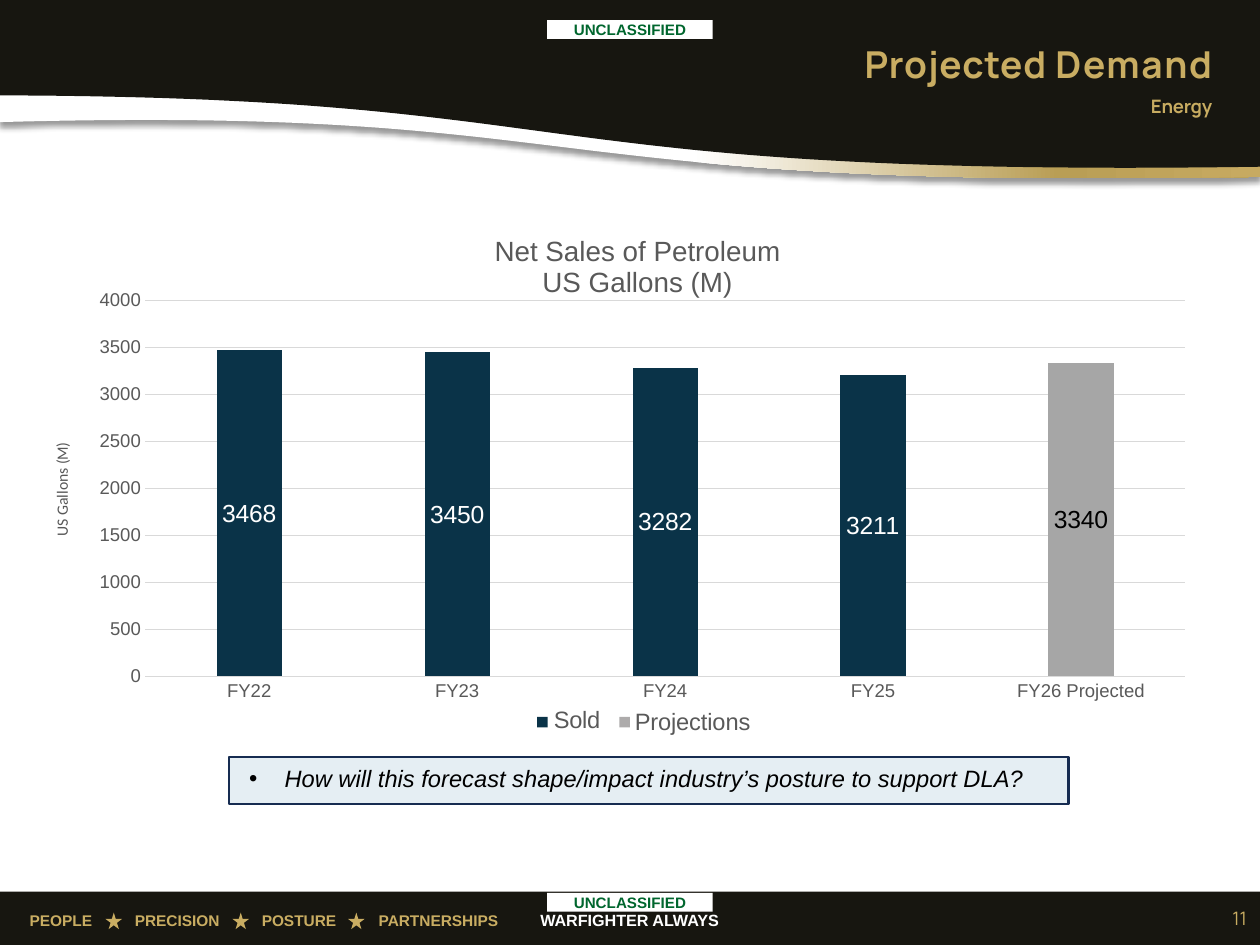
from lxml.etree import SubElement
from pptx import Presentation
from pptx.chart.data import CategoryChartData
from pptx.dml.color import RGBColor
from pptx.enum.chart import XL_CHART_TYPE, XL_LABEL_POSITION, XL_TICK_MARK
from pptx.enum.shapes import MSO_SHAPE
from pptx.enum.text import MSO_ANCHOR, MSO_AUTO_SIZE, PP_ALIGN
from pptx.oxml import parse_xml
from pptx.oxml.ns import nsdecls, qn
from pptx.util import Cm, Pt

BLACK, WHITE, GOLD, GREY, NAVY = "171610", "FFFFFF", "C9AD62", "595959", "0A3348"
NO_INSETS = dict.fromkeys(["margin_left", "margin_top", "margin_right", "margin_bottom"], 0)
MIDDLE = {"vertical_anchor": MSO_ANCHOR.MIDDLE}
CENTRED = {"alignment": PP_ALIGN.CENTER}
RIGHT = {"alignment": PP_ALIGN.RIGHT}


def colour(code):
    return RGBColor.from_string(code)


def write(box, spans, ink, font, frame_look={}, para_look={}):
    """Fill a shape with one paragraph; spans are (text, letter spacing) pairs."""
    frame = box.text_frame
    para = frame.paragraphs[0]
    for target, look in ((frame, {"word_wrap": True, **frame_look}), (para, para_look)):
        for name, value in look.items():
            setattr(target, name, value)
    for text, spacing in spans:
        span = para.add_run()
        span.text = text
        for name, value in font.items():
            setattr(span.font, name, value)
        span.font.color.rgb = colour(ink)
        if spacing:
            span.font._element.set("spc", str(spacing))
    return para


deck = Presentation()
deck.slide_width, deck.slide_height = Cm(28.78), Cm(21.59)
page = deck.slides.add_slide(deck.slide_layouts[1])

# Header: gold ribbon behind a dark wave, each closed by a Bezier lower edge
waves = []
for top, edge in (
    (1.5, [(0, 2.79), (13.94, 2.41), (11.53, 4.37), (28.78, 4.04)]),
    (0, [(0, 2.18), (13.87, 2.21), (11.48, 4.06), (28.78, 3.81)]),
):
    outline = []
    for step in range(61):
        t = step / 60
        weights = ((1 - t) ** 3, 3 * t * (1 - t) ** 2, 3 * t * t * (1 - t), t ** 3)
        outline.append([Cm(sum(w * point[axis] for w, point in zip(weights, edge))) for axis in (0, 1)])
    builder = page.shapes.build_freeform(Cm(28.78), Cm(top))
    builder.add_line_segments([(0, Cm(top))] + outline, close=True)
    wave = builder.convert_to_shape()
    wave.shadow.inherit = False
    wave.line.fill.background()
    wave.fill.solid()
    wave.fill.fore_color.rgb = colour(BLACK)
    waves.append(wave)

ribbon = waves[0]._element.spPr
stops = "".join(
    f'<a:gs pos="{place}000"><a:srgbClr val="{code}"/></a:gs>'
    for place, code in ((55, WHITE), (84, "B99E55"), (100, "C7AA61"))
)
ribbon.replace(ribbon.find(qn("a:solidFill")), parse_xml(
    f'<a:gradFill {nsdecls("a")}><a:gsLst>{stops}</a:gsLst><a:lin ang="0" scaled="0"/></a:gradFill>'))
ribbon.find(qn("a:effectLst")).append(parse_xml(
    f'<a:outerShdw {nsdecls("a")} blurRad="50800" dist="38100" dir="5400000">'
    '<a:srgbClr val="000000"><a:alpha val="40000"/></a:srgbClr></a:outerShdw>'))

# Plain shapes: footer bar, stars, legend keys, markings and question box
blocks = [(MSO_SHAPE.RECTANGLE, 0, 20.37, 28.78, 1.22, BLACK)]
blocks += [(MSO_SHAPE.STAR_5_POINT, left, 20.85, 0.38, 0.38, GOLD) for left in (2.41, 5.31, 7.95)]
blocks += [(MSO_SHAPE.RECTANGLE, left, 16.38, 0.24, 0.24, key) for left, key in ((12.27, NAVY), (14.15, "ADABAB"))]
blocks += [(MSO_SHAPE.RECTANGLE, 12.5, top, 3.78, 0.43, WHITE) for top in (0.46, 20.4)]
blocks += [(MSO_SHAPE.RECTANGLE, 5.23, 17.3, 19.18, 1.07, "E5EEF3")]
drawn = []
for kind, left, top, width, height, fill in blocks:
    shape = page.shapes.add_shape(kind, Cm(left), Cm(top), Cm(width), Cm(height))
    shape.shadow.inherit = False
    shape.fill.solid()
    shape.fill.fore_color.rgb = colour(fill)
    shape.line.fill.background()
    drawn.append(shape)

*_, top_marking, bottom_marking, question = drawn
for marking in (top_marking, bottom_marking):
    write(marking, [("UNCLASSIFIED", 0)], "00662E", {"name": "Arial", "size": Pt(9.8), "bold": True},
          {**NO_INSETS, **MIDDLE}, CENTRED)

question.line.color.rgb = colour("162C51")
question.line.width = Pt(1.5)
para = write(question, [("How will this forecast shape/impact industry’s posture to support DLA?", 0)], "000000",
             {"name": "Arial", "size": Pt(15.3), "italic": True},
             {"margin_left": Cm(0.25), "margin_top": Cm(0.15), "margin_right": 0, "margin_bottom": Cm(0.25),
              "vertical_anchor": MSO_ANCHOR.TOP},
             {"alignment": PP_ALIGN.LEFT})
bullet = para._p.get_or_add_pPr()
bullet.set("marL", str(Cm(1.02)))
bullet.set("indent", str(-Cm(0.81)))
SubElement(bullet, qn("a:buFont")).set("typeface", "Arial")
SubElement(bullet, qn("a:buChar")).set("char", "•")

# Text boxes: footer, page number, legend labels and axis caption
legend_font = {"name": "Arial", "size": Pt(15.3)}
motto = "\t".join(["PEOPLE", "PRECISION", "POSTURE", "PARTNERSHIPS"])
paras = []
for place, spans, ink, font, frame_look, para_look in (
    ((0.43, 20.7, 11.71, 0.71), [(motto, 0)], GOLD,
     {"name": "Arial", "size": Pt(10), "bold": True}, {}, {}),
    ((11.35, 20.68, 6.07, 0.71), [("WARFIGHTER ALWAYS", 0)], WHITE,
     {"name": "Arial", "size": Pt(10.5), "bold": True}, {}, CENTRED),
    ((27.66, 20.4, 1.07, 1.14), [("11", 0)], GOLD,
     {"name": "Manrope", "size": Pt(12)}, MIDDLE, RIGHT),
    ((12.65, 16.1, 1.3, 0.69), [("Sold", -20)], GREY, legend_font, NO_INSETS, {}),
    ((14.5, 16.15, 2.8, 0.69), [("Projections", -10)], GREY, legend_font, NO_INSETS, {}),
    ((1.19, 10.08, 0.43, 2.18), [("US Gallons ", 0), ("(M)", -30)], "585858",
     {"name": "Calibri", "size": Pt(10.2)}, NO_INSETS, {}),
):
    box = page.shapes.add_textbox(*map(Cm, place))
    paras.append(write(box, spans, ink, font, frame_look, para_look))
box.text_frame._txBody.bodyPr.set("vert", "vert270")
tabs = SubElement(paras[0]._p.get_or_add_pPr(), qn("a:tabLst"))
for stop in (2.4, 5.3, 7.97):
    SubElement(tabs, qn("a:tab"), pos=str(Cm(stop)), algn="l")

# Chart of net sales
data = CategoryChartData()
data.categories = ["FY22", "FY23", "FY24", "FY25", "FY26 Projected"]
data.add_series("Series 1", [3468, 3450, 3282, 3211, 3340])
chart = page.shapes.add_chart(
    XL_CHART_TYPE.COLUMN_CLUSTERED, Cm(1.91), Cm(4.8), Cm(25.17), Cm(11.35), data).chart
chart.has_legend = False
chart.font.name, chart.font.size = "Arial", Pt(10)

heading = chart.chart_title.text_frame
heading.text = "Net Sales of Petroleum\nUS Gallons (M)"
for para in heading.paragraphs:
    for name, value in {"name": "Arial", "size": Pt(18), "bold": False}.items():
        setattr(para.font, name, value)
    para.font.color.rgb = colour(GREY)

for axis in (chart.category_axis, chart.value_axis):
    axis.major_tick_mark = axis.minor_tick_mark = XL_TICK_MARK.NONE
    axis.tick_labels.font.size = Pt(12)
    axis.tick_labels.font.color.rgb = colour(GREY)
values = chart.value_axis
values.minimum_scale, values.maximum_scale, values.major_unit = 0, 4000, 500
for line in (chart.category_axis.format.line, values.major_gridlines.format.line):
    line.color.rgb = colour("D9D9D9")
    line.width = Pt(0.75)
values.format.line.fill.background()

plot = chart.plots[0]
plot.gap_width, plot.overlap, plot.vary_by_categories = 219, -27, False
sales = plot.series[0]
for index, fill in enumerate([NAVY] * 4 + ["A6A6A6"]):
    bar = sales.points[index].format.fill
    bar.solid()
    bar.fore_color.rgb = colour(fill)
sales.data_labels.show_value = True
for labels, ink in ((sales.data_labels, WHITE), (sales.points[4].data_label, "000000")):
    labels.position = XL_LABEL_POSITION.CENTER
    labels.font.size = Pt(16)
    labels.font.color.rgb = colour(ink)

# Fixed places for the chart heading and the plot area
for owner, target, place in (
    (chart.chart_title._element, "", {"x": 0.37, "y": 0.04}),
    (chart._chartSpace.chart.plotArea, "inner", {"x": 0.056, "y": 0.182, "w": 0.944, "h": 0.757}),
):
    for old in owner.findall(qn("c:layout")):
        owner.remove(old)
    layout = parse_xml(f'<c:layout {nsdecls("c")}><c:manualLayout/></c:layout>')
    settings = [("layoutTarget", target)] if target else []
    settings += [("xMode", "edge"), ("yMode", "edge"), *place.items()]
    for name, value in settings:
        SubElement(layout[0], qn(f"c:{name}")).set("val", str(value))
    owner.insert(0 if target else 1, layout)

# Title and subtitle placeholders, raised above the header
title, subtitle = page.shapes.title, page.placeholders[1]
for holder, place in ((title, (5.46, 0.94, 22.48, 1.04)), (subtitle, (15.39, 2.13, 12.55, 1.04))):
    holder.left, holder.top, holder.width, holder.height = map(Cm, place)
    page.shapes._spTree.append(holder._element)
write(title, [("Projected ", 50), ("Demand", 110)], GOLD, {"name": "Manrope", "size": Pt(24), "bold": True},
      {**MIDDLE, "auto_size": MSO_AUTO_SIZE.NONE}, RIGHT)
para = write(subtitle, [("Energy", -10)], "C8AC61", {"name": "Manrope", "size": Pt(12), "bold": True},
             {**NO_INSETS, "margin_right": Cm(0.25), "auto_size": MSO_AUTO_SIZE.NONE},
             {**RIGHT, "line_spacing": 1.1, "space_before": Pt(0)})
plain = para._p.get_or_add_pPr()
plain.set("marL", "0")
plain.set("indent", "0")
SubElement(plain, qn("a:buNone"))

deck.save("out.pptx")
